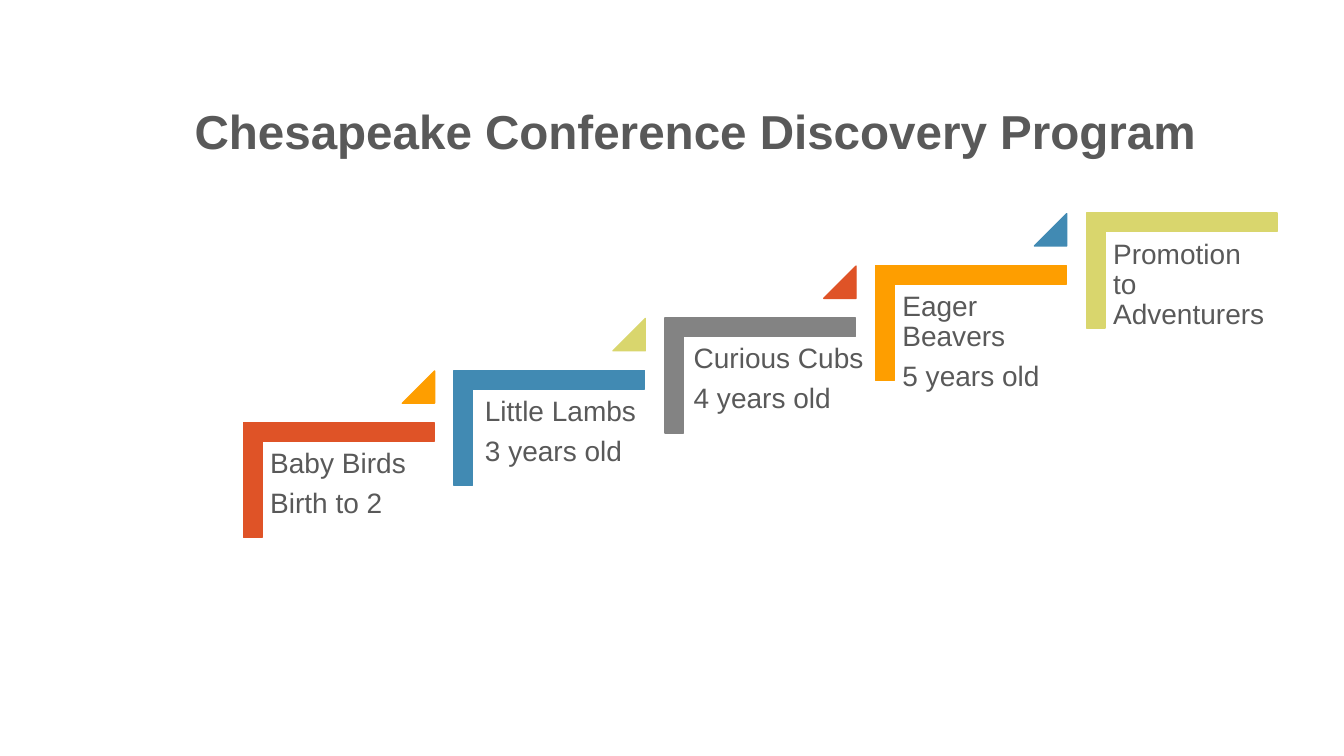
from pptx import Presentation
from pptx.dml.color import RGBColor
from pptx.enum.shapes import MSO_SHAPE as Shape
from pptx.enum.text import MSO_ANCHOR as Anchor, MSO_AUTO_SIZE as AutoSize, PP_ALIGN as Align
from pptx.util import Pt

PX = 9144  # 100 px to the inch

ORANGE_RED = RGBColor(0xDF, 0x53, 0x27)
AMBER = RGBColor(0xFE, 0x9E, 0x00)
BLUE = RGBColor(0x41, 0x8A, 0xB3)
LIME = RGBColor(0xD9, 0xD6, 0x6D)
GRAY = RGBColor(0x83, 0x83, 0x83)
TEXT_GRAY = RGBColor(0x59, 0x59, 0x59)

STEP_X, STEP_Y = 209, -52
TITLE_FONT = {"name": "Arial", "size": Pt(34), "bold": True}
LABEL_FONT = {"name": "Arial", "size": Pt(20)}
TITLE_FRAME = {"vertical_anchor": Anchor.BOTTOM, "auto_size": AutoSize.NONE, "word_wrap": True}
LABEL_FRAME = {"vertical_anchor": Anchor.TOP, "word_wrap": True,
               **{f"margin_{side}": 8 * PX for side in ("left", "top", "right", "bottom")}}

# Label lines, corner colour, arrow colour, label shift from its corner, label width
STAGES = [
    (["Baby Birds", "Birth to 2"], ORANGE_RED, AMBER, -19, 171),
    (["Little Lambs", "3 years old"], BLUE, LIME, -15, 183),
    (["Curious Cubs", "4 years old"], GRAY, ORANGE_RED, -17, 194),
    (["Eager Beavers", "5 years old"], AMBER, BLUE, -19, 171),
    (["Promotion to Adventurers"], LIME, None, -19, 171),
]


def emu(*lengths):
    return [length * PX for length in lengths]


def set_attributes(target, values):
    for name, value in values.items():
        setattr(target, name, value)


def style_paragraph(paragraph, font):
    paragraph.line_spacing = 0.9
    set_attributes(paragraph.font, font)
    paragraph.font.color.rgb = TEXT_GRAY


def add_title(slide, text):
    title = slide.shapes.title
    title.left, title.top, title.width, title.height = emu(183, 33, 1083, 131)
    set_attributes(title.text_frame, TITLE_FRAME)
    title.text_frame.text = text
    paragraph = title.text_frame.paragraphs[0]
    paragraph.alignment = Align.LEFT
    style_paragraph(paragraph, TITLE_FONT)


def add_solid(shapes, kind, box, color, adjustments, rotation=0):
    """Add a preset shape whose fill and outline share one colour."""
    shape = shapes.add_shape(kind, *emu(*box))
    shape.shadow.inherit = False
    shape.rotation = rotation
    for index, value in enumerate(adjustments):
        shape.adjustments[index] = value
    shape.fill.solid()
    shape.fill.fore_color.rgb = color
    shape.line.color.rgb = color
    shape.line.width = Pt(1)


def add_label(shapes, box, lines):
    frame = shapes.add_textbox(*emu(*box)).text_frame
    set_attributes(frame, LABEL_FRAME)
    frame.text = "\n".join(lines)
    for paragraph in frame.paragraphs:
        style_paragraph(paragraph, LABEL_FONT)
        paragraph.space_after = Pt(7)


def add_stage(shapes, index, lines, corner_color, arrow_color, label_shift, label_width):
    left, top = 279 + index * STEP_X, 382 + index * STEP_Y
    add_solid(shapes, Shape.CORNER, (left, top, 114, 189), corner_color, (0.161, 0.161), 90)
    add_label(shapes, (left + label_shift, top + 56, label_width, 150), lines)
    if arrow_color:
        add_solid(shapes, Shape.ISOSCELES_TRIANGLE, (left + 120, top - 14, 32, 32),
                  arrow_color, (1,))


def main():
    presentation = Presentation()
    presentation.slide_width, presentation.slide_height = emu(1333, 750)
    slide = presentation.slides.add_slide(presentation.slide_layouts[5])
    add_title(slide, "Chesapeake Conference Discovery Program")
    staircase = slide.shapes.add_group_shape()
    for index, stage in enumerate(STAGES):
        add_stage(staircase.shapes, index, *stage)
    presentation.save("out.pptx")


if __name__ == "__main__":
    main()
